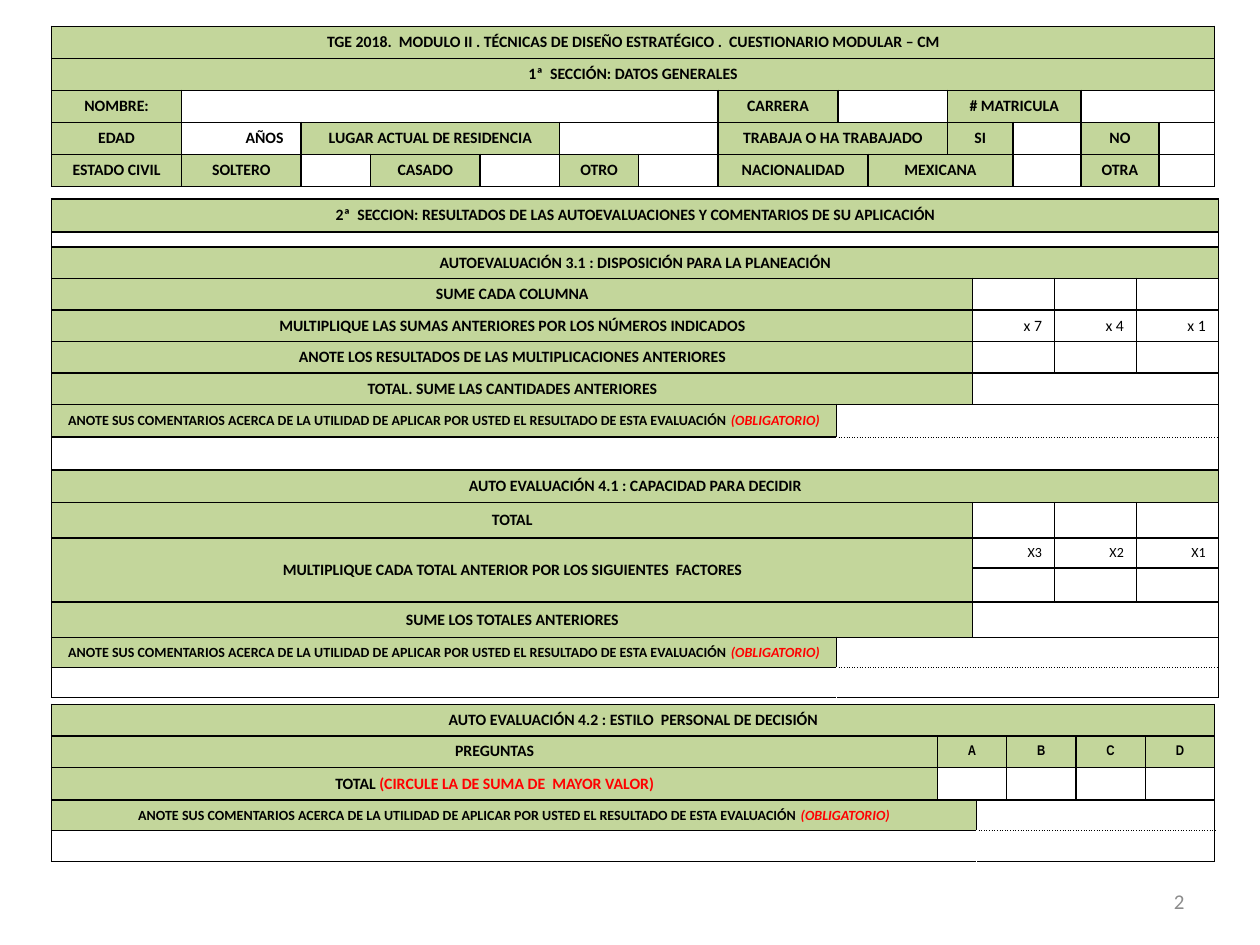
from dataclasses import dataclass, field

from lxml.etree import SubElement
from pptx import Presentation
from pptx.dml.color import RGBColor
from pptx.enum.text import MSO_ANCHOR as Anchor, PP_ALIGN as Align
from pptx.oxml.ns import qn
from pptx.util import Inches, Pt

GREEN, WHITE, BLACK, RED, GRAY = "C3D69B", "FFFFFF", "000000", "FF0000", "8C8C8C"
SOLID, THIN, DOTTED, HIDDEN = (BLACK, 1, "solid"), (BLACK, 0.75, "solid"), (BLACK, 0.75, "sysDot"), (WHITE, 0.75, "solid")
COMMENT = "ANOTE SUS COMENTARIOS ACERCA DE LA UTILIDAD DE APLICAR POR USTED EL RESULTADO DE ESTA EVALUACIÓN "


@dataclass
class Cell:
    """Describe one table cell and its span."""
    text: str = ""
    columns: int = 1
    rows: int = 1
    fill: str = WHITE
    size: float = 9
    bold: bool = True
    font: str = "Calibri"
    align: Align = Align.CENTER
    accent: str = ""
    italic: bool = False
    margin: float = 0.1
    edges: dict = field(default_factory=dict)


def label(text, columns=1, **options):
    """Return a green heading cell."""
    return Cell(text, columns, fill=GREEN, **options)


def blanks(*spans):
    """Return one empty white cell for each span."""
    return [Cell(columns=span) for span in spans]


def factors(texts, size):
    """Return right-aligned multiplier cells."""
    return [Cell(text, size=size, bold=False, align=Align.RIGHT) for text in texts]


def comment_rows(left_span, right_span):
    """Return the two rows of a comment area."""
    heading = label(COMMENT, left_span, size=8, accent="(OBLIGATORIO)", italic=True)
    return [
        [heading, Cell(columns=right_span, edges={"B": DOTTED})],
        [Cell(columns=left_span, edges={"R": HIDDEN, "B": THIN}),
         Cell(columns=right_span, edges={"L": HIDDEN, "T": DOTTED, "B": THIN})],
    ]


def rgb(color):
    """Convert a hex string to a colour."""
    return RGBColor.from_string(color)


def add_run(paragraph, text, size, color, bold=False, italic=False, font="Calibri"):
    """Append a formatted run."""
    run = paragraph.add_run()
    run.text = text
    run.font.name, run.font.size = font, Pt(size)
    run.font.bold, run.font.italic = bold, italic
    run.font.color.rgb = rgb(color)


def draw_borders(table_cell, edges):
    """Draw the four sides of a cell."""
    properties = table_cell._tc.get_or_add_tcPr()
    for side in "LRTB":
        color, width, dash = edges.get(side, SOLID)
        line = SubElement(properties, qn(f"a:ln{side}"), w=str(Pt(width)))
        SubElement(SubElement(line, qn("a:solidFill")), qn("a:srgbClr"), val=color)
        SubElement(line, qn("a:prstDash"), val=dash)


def write_cell(table_cell, cell):
    """Put a cell's text in place."""
    table_cell.vertical_anchor = Anchor.MIDDLE
    table_cell.margin_left = table_cell.margin_right = Inches(cell.margin)
    table_cell.margin_top = table_cell.margin_bottom = Inches(0.03 if cell.text else 0)
    paragraph = table_cell.text_frame.paragraphs[0]
    paragraph.alignment = cell.align
    if not cell.text:
        SubElement(paragraph._p, qn("a:endParaRPr"), sz="600")
        return
    add_run(paragraph, cell.text, cell.size, BLACK, cell.bold, font=cell.font)
    if cell.accent:
        add_run(paragraph, cell.accent, cell.size, RED, cell.bold, cell.italic)


def add_grid(slide, left, top, widths, heights, rows):
    """Build a table from rows of cells."""
    frame = slide.shapes.add_table(len(heights), len(widths), Inches(left), Inches(top),
                                   Inches(sum(widths)), Inches(sum(heights)))
    table = frame.table
    table.first_row = table.horz_banding = False
    for column, width in zip(table.columns, widths):
        column.width = Inches(width)
    for row, height in zip(table.rows, heights):
        row.height = Inches(height)
    for y, cells in enumerate(rows):
        x = 0
        for cell in cells:
            while table.cell(y, x).is_spanned:
                x += 1
            origin = table.cell(y, x)
            last_y, last_x = y + cell.rows - 1, x + cell.columns - 1
            if (last_y, last_x) != (y, x):
                origin.merge(table.cell(last_y, last_x))
            for covered_y in range(y, last_y + 1):
                for covered_x in range(x, last_x + 1):
                    covered = table.cell(covered_y, covered_x)
                    draw_borders(covered, cell.edges)
                    covered.fill.solid()
                    covered.fill.fore_color.rgb = rgb(cell.fill)
            write_cell(origin, cell)
            x = last_x + 1


def add_general_data(slide, left, top):
    """Add the personal data section."""
    widths = [1.03, 0.95, 0.55, 0.87, 0.63, 0.63, 0.63, 0.95, 0.24, 0.63, 0.52, 0.54, 0.62, 0.44]
    rows = [
        [label("TGE 2018.  MODULO II . TÉCNICAS DE DISEÑO ESTRATÉGICO .  CUESTIONARIO MODULAR – CM", 14)],
        [label("1ª  SECCIÓN: DATOS GENERALES", 14)],
        [label("NOMBRE:"), *blanks(6), label("CARRERA"), *blanks(2), label("# MATRICULA", 2), *blanks(2)],
        [label("EDAD"), Cell("AÑOS", align=Align.RIGHT, margin=0.14),
         label("LUGAR ACTUAL DE RESIDENCIA", 3), *blanks(2),
         label("TRABAJA O HA TRABAJADO", 3), label("SI"), *blanks(1), label("NO"), *blanks(1)],
        [label("ESTADO CIVIL", margin=0.05), label("SOLTERO"), *blanks(1), label("CASADO"), *blanks(1),
         label("OTRO"), *blanks(1), label("NACIONALIDAD", 2), label("MEXICANA", 2), *blanks(1),
         label("OTRA"), *blanks(1)],
    ]
    add_grid(slide, left, top, widths, [1.27 / 5] * 5, rows)


def add_self_assessments(slide, left, top):
    """Add the results of assessments 3.1 and 4.1."""
    widths = [6.23, 1.08] + [0.65] * 3
    heights = [0.26, 0.12] + [0.25] * 5 + [0.26] * 3 + [0.28, 0.24, 0.27, 0.28, 0.24, 0.24]
    rows = [
        [label("2ª  SECCION: RESULTADOS DE LAS AUTOEVALUACIONES Y COMENTARIOS DE SU APLICACIÓN", 5)],
        blanks(5),
        [label("AUTOEVALUACIÓN 3.1 : DISPOSICIÓN PARA LA PLANEACIÓN", 5)],
        [label("SUME CADA COLUMNA", 2), *blanks(1, 1, 1)],
        [label("MULTIPLIQUE LAS SUMAS ANTERIORES POR LOS NÚMEROS INDICADOS", 2),
         *factors(["x 7", "x 4", "x 1"], 9)],
        [label("ANOTE LOS RESULTADOS DE LAS MULTIPLICACIONES ANTERIORES", 2), *blanks(1, 1, 1)],
        [label("TOTAL. SUME LAS CANTIDADES ANTERIORES", 2), *blanks(3)],
        *comment_rows(1, 4),
        [label("AUTO EVALUACIÓN 4.1 : CAPACIDAD PARA DECIDIR", 5)],
        [label("TOTAL", 2), *blanks(1, 1, 1)],
        [label("MULTIPLIQUE CADA TOTAL ANTERIOR POR LOS SIGUIENTES  FACTORES", 2, rows=2),
         *factors(["X3", "X2", "X1"], 8)],
        blanks(1, 1, 1),
        [label("SUME LOS TOTALES ANTERIORES", 2), *blanks(3)],
        *comment_rows(1, 4),
    ]
    add_grid(slide, left, top, widths, heights, rows)


def add_decision_style(slide, left, top):
    """Add the results of assessment 4.2."""
    widths = [7.03, 0.31, 0.24] + [0.55] * 3
    heights = [0.25, 0.25, 0.26, 0.24, 0.25]
    letters = [label(letter, span, size=8, font="Arial Narrow") for letter, span in zip("ABCD", (2, 1, 1, 1))]
    rows = [
        [label("AUTO EVALUACIÓN 4.2 : ESTILO  PERSONAL DE DECISIÓN", 6)],
        [label("PREGUNTAS"), *letters],
        [label("TOTAL ", accent="(CIRCULE LA DE SUMA DE  MAYOR VALOR)"), *blanks(2, 1, 1, 1)],
        *comment_rows(2, 4),
    ]
    add_grid(slide, left, top, widths, heights, rows)


def add_page_number(slide, left, top, width, height):
    """Add the page number."""
    box = slide.shapes.add_textbox(Inches(left), Inches(top), Inches(width), Inches(height))
    frame = box.text_frame
    frame.word_wrap = True
    frame.vertical_anchor = Anchor.MIDDLE
    paragraph = frame.paragraphs[0]
    paragraph.alignment = Align.RIGHT
    add_run(paragraph, "2", 12, GRAY)


def main():
    """Build and save the questionnaire."""
    presentation = Presentation()
    presentation.slide_width, presentation.slide_height = Inches(10), Inches(7.5)
    slide = presentation.slides.add_slide(presentation.slide_layouts[6])
    add_self_assessments(slide, 0.41, 1.58)
    add_page_number(slide, 7.17, 6.95, 2.33, 0.4)
    add_general_data(slide, 0.41, 0.21)
    add_decision_style(slide, 0.41, 5.59)
    presentation.save("out.pptx")


if __name__ == "__main__":
    main()
